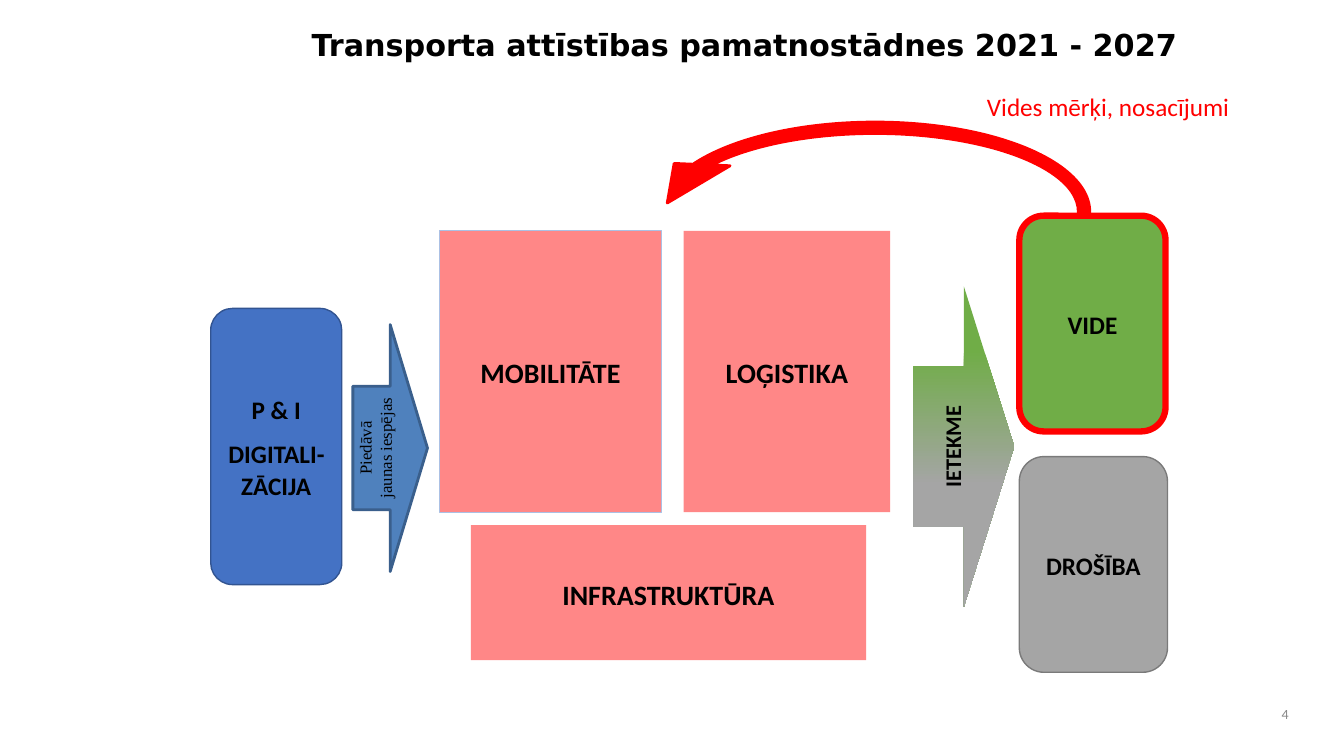
import pptx
import pptx.util
import pptx.dml.color
import pptx.enum.shapes
import pptx.enum.text
import pptx.oxml

Inches = pptx.util.Inches
Pt = pptx.util.Pt
RGBColor = pptx.dml.color.RGBColor
Kind = pptx.enum.shapes.MSO_SHAPE
Align = pptx.enum.text.PP_ALIGN
Anchor = pptx.enum.text.MSO_ANCHOR
Fit = pptx.enum.text.MSO_AUTO_SIZE

BLACK = RGBColor(0x00, 0x00, 0x00)
WHITE = RGBColor(0xFF, 0xFF, 0xFF)
RED = RGBColor(0xFF, 0x00, 0x00)
ROSE = RGBColor(0xFF, 0x25, 0x25)
PALE = RGBColor(0xAB, 0xC0, 0xE4)
GREEN = RGBColor(0x70, 0xAD, 0x47)
GRAY = RGBColor(0xA5, 0xA5, 0xA5)
SLATE = RGBColor(0x7A, 0x7A, 0x7A)
BLUE = RGBColor(0x44, 0x72, 0xC4)
NAVY = RGBColor(0x32, 0x54, 0x91)
STEEL = RGBColor(0x4F, 0x81, 0xBD)
DEEP = RGBColor(0x3A, 0x5F, 0x8C)
MUTED = RGBColor(0x89, 0x89, 0x89)


def write(shape, lines, size, color=BLACK, font="Calibri", bold=False,
          align=Align.CENTER, anchor=Anchor.MIDDLE, gap=0, pitch=None):
    frame = shape.text_frame
    frame.word_wrap = True
    frame.vertical_anchor = anchor
    for i, line in enumerate(lines):
        para = frame.add_paragraph() if i else frame.paragraphs[0]
        para.alignment = align
        para.space_after = Pt(gap)
        if pitch:
            para.line_spacing = pitch
        run = para.add_run()
        run.text = line
        run.font.size = Pt(size)
        run.font.name = font
        run.font.bold = bold
        run.font.color.rgb = color


def turn(shape):
    """Make the text read from bottom to top."""
    shape.text_frame._txBody.bodyPr.set("vert", "vert270")


def draw(slide, kind, box, fill=None, line=None, width=1):
    shape = slide.shapes.add_shape(kind, *map(Inches, box))
    shape.shadow.inherit = False
    if fill is not None:
        shape.fill.solid()
        shape.fill.fore_color.rgb = fill
    if line is None:
        shape.line.fill.background()
    else:
        shape.line.color.rgb = line
        shape.line.width = Pt(width)
    return shape


def head(slide, box):
    title = slide.shapes.title
    title.left, title.top, title.width, title.height = map(Inches, box)
    write(title, ["Transporta attīstības pamatnostādnes 2021 - 2027"], 21.6,
          font="DejaVu Sans", bold=True, align=Align.LEFT, anchor=Anchor.TOP)
    title.text_frame.auto_size = Fit.NONE


def number(slide, box):
    label = slide.shapes.add_textbox(*map(Inches, box))
    write(label, ["4"], 10, MUTED, align=Align.RIGHT)


def goals(slide, box):
    """Environment above safety, at the right."""
    left, top, width, height = box
    tall = 2.14
    low = draw(slide, Kind.ROUNDED_RECTANGLE,
               (left, top + height - tall, width, tall), GRAY, SLATE)
    high = draw(slide, Kind.ROUNDED_RECTANGLE,
                (left, top, width - 0.02, tall), GREEN, RED, 4.5)
    for shape, word in ((low, "DROŠĪBA"), (high, "VIDE")):
        write(shape, [word], 18, bold=True, pitch=1.07)


def digital(slide, box):
    shape = draw(slide, Kind.ROUNDED_RECTANGLE, box, BLUE, NAVY)
    write(shape, ["P & I", "DIGITALI-ZĀCIJA"], 18, bold=True, gap=8, pitch=1.07)


def core(slide, box):
    """Two blocks side by side above a wide one."""
    left, top, width, height = box
    tall, base, inset = 2.79, 1.34, 0.31
    blocks = (
        ("MOBILITĀTE", (left, top, 2.2, tall), PALE),
        ("LOĢISTIKA", (left + width - 2.05, top, 2.05, tall), None),
        ("INFRASTRUKTŪRA", (left + inset, top + height - base,
                            3.92, base), None),
    )
    for word, place, line in blocks:
        shape = draw(slide, Kind.RECTANGLE, place, ROSE, line, 0.5)
        color = shape.fill._xPr.solidFill[0]
        alpha = color.makeelement(pptx.oxml.ns.qn("a:alpha"), {"val": "55000"})
        color.append(alpha)
        write(shape, [word], 20, bold=True, pitch=1.07)


def impact(slide, box):
    arrow = draw(slide, Kind.RIGHT_ARROW, box)
    arrow.fill.gradient()
    arrow.fill.gradient_angle = 270
    for stop, (place, color) in zip(arrow.fill.gradient_stops,
                                    ((0.2, GREEN), (0.62, GRAY))):
        stop.position = place
        stop.color.rgb = color
    write(arrow, ["IETEKME"], 16, bold=True, gap=8, pitch=1.07)
    turn(arrow)


def offer(slide, box):
    left, top = box[:2]
    draw(slide, Kind.RIGHT_ARROW, box, STEEL, DEEP, 2)
    label = slide.shapes.add_textbox(
        *map(Inches, (left - 0.03, top + 0.65, 0.61, 1.15)))
    write(label, ["Piedāvā", "jaunas iespējas"], 12,
          font="Times New Roman", anchor=Anchor.TOP)
    label.text_frame.word_wrap = False
    turn(label)


def feedback(slide, box):
    """Curved arrow from the environment back to the core, with its label."""
    left, top, width, height = box
    arc = draw(slide, Kind.CIRCULAR_ARROW,
               (left, top + 0.13, 4.7, height - 0.13), RED, RED, 2)
    for i, value in enumerate((0.051, 7.706, 206.863, 107.817, 0.125)):
        arc.adjustments[i] = value
    arc._element.spPr.xfrm.set("flipH", "1")
    wide = 2.68
    label = draw(slide, Kind.RECTANGLE, (left + width - wide, top, wide, 0.4),
                 WHITE, WHITE, 0.75)
    write(label, ["Vides mērķi, nosacījumi"], 18, RED,
          align=Align.LEFT, anchor=Anchor.TOP)


def main():
    deck = pptx.Presentation()
    deck.slide_width = Inches(13.33)
    deck.slide_height = Inches(7.5)
    slide = deck.slides.add_slide(deck.slide_layouts[5])
    head(slide, (2.99, 0.21, 9.38, 0.65))
    number(slide, (12.44, 6.92, 0.44, 0.33))
    goals(slide, (10.11, 2.14, 1.47, 4.53))
    digital(slide, (2.09, 3.06, 1.3, 2.74))
    core(slide, (4.36, 2.29, 4.47, 4.26))
    impact(slide, (9.06, 2.84, 1, 3.18))
    offer(slide, (3.5, 3.22, 0.74, 2.45))
    feedback(slide, (6.33, 0.86, 6.04, 2.35))
    deck.save("out.pptx")


if __name__ == "__main__":
    main()
